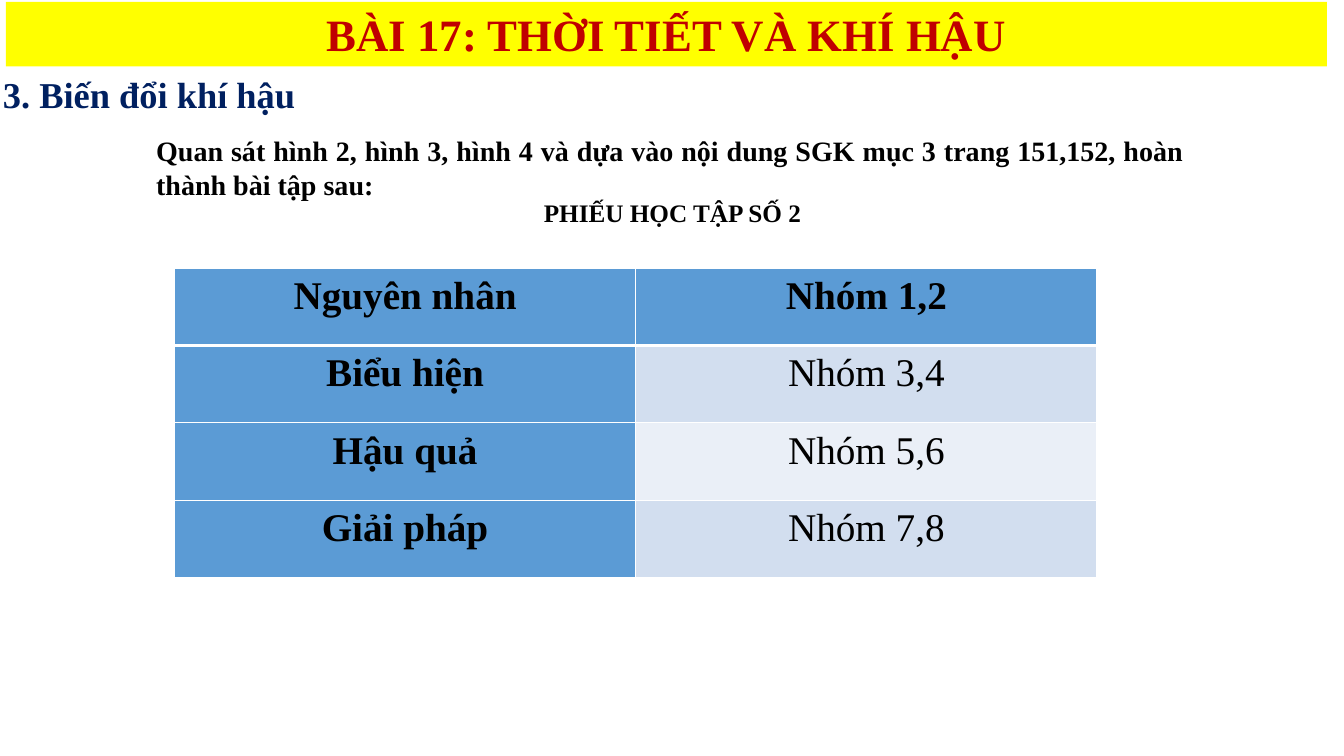
from lxml.etree import SubElement
from pptx import Presentation
from pptx.dml.color import RGBColor
from pptx.enum.shapes import MSO_SHAPE
from pptx.enum.text import MSO_ANCHOR, PP_ALIGN
from pptx.oxml.ns import qn
from pptx.util import Inches, Pt

FONT = "Times New Roman"
BLACK, WHITE, BLUE = "000000", "FFFFFF", "5B9BD5"
BANDS = ["D2DEEF", "EAEFF7"]
GROUPS = [
    ("Nguyên nhân", "Nhóm 1,2"),
    ("Biểu hiện", "Nhóm 3,4"),
    ("Hậu quả", "Nhóm 5,6"),
    ("Giải pháp", "Nhóm 7,8"),
]


def rgb(value):
    return RGBColor.from_string(value)


def write(frame, text, size, color=BLACK, align=PP_ALIGN.LEFT, bold=True):
    """Set a one-paragraph text and return the paragraph."""
    frame.text = text
    paragraph = frame.paragraphs[0]
    paragraph.alignment = align
    font = paragraph.runs[0].font
    font.name, font.size, font.bold = FONT, Pt(size), bold
    font.color.rgb = rgb(color)
    return paragraph


def add_banner(slide, left, top, width, height):
    banner = slide.shapes.add_shape(
        MSO_SHAPE.RECTANGLE, Inches(left), Inches(top), Inches(width), Inches(height))
    banner.shadow.inherit = False
    banner.fill.solid()
    banner.fill.fore_color.rgb = rgb("FFFF00")
    banner.line.fill.background()
    banner.text_frame.word_wrap = True
    banner.text_frame.vertical_anchor = MSO_ANCHOR.TOP
    write(banner.text_frame, "BÀI 17: THỜI TIẾT VÀ KHÍ HẬU", 32, "C00000", PP_ALIGN.CENTER)


def add_text(slide, left, top, width, height, text, size, wrap=True, **style):
    box = slide.shapes.add_textbox(
        Inches(left), Inches(top), Inches(width), Inches(height))
    box.text_frame.word_wrap = wrap
    return write(box.text_frame, text, size, **style)


def add_border(cell, side, points):
    line = SubElement(cell._tc.get_or_add_tcPr(), qn(f"a:ln{side}"), w=str(Pt(points)))
    fill = SubElement(line, qn("a:solidFill"))
    SubElement(fill, qn("a:srgbClr"), val=WHITE)


def add_group_table(slide, left, top, width, height):
    table = slide.shapes.add_table(
        len(GROUPS), 2, Inches(left), Inches(top), Inches(width), Inches(height)).table
    table.first_col = True
    for row, texts in enumerate(GROUPS):
        for column, text in enumerate(texts):
            cell = table.cell(row, column)
            is_header = row == 0 or column == 0
            cell.margin_left = cell.margin_right = Inches(0.07)
            cell.margin_top = cell.margin_bottom = 0
            for side in "LRTB":
                header_edge = (row, side) in [(0, "B"), (1, "T")]
                add_border(cell, side, 3 if header_edge else 1)
            cell.fill.solid()
            cell.fill.fore_color.rgb = rgb(BLUE if is_header else BANDS[(row - 1) % 2])
            paragraph = write(cell.text_frame, text, 28, align=PP_ALIGN.CENTER, bold=is_header)
            paragraph.line_spacing = 1.15


def build_slide(slide):
    heading = add_text(slide, -0.07, 0.72, 3.89, 0.5, "3. Biến đổi khí hậu", 26, color="002060")
    heading.line_spacing = 0.9
    add_banner(slide, 0.06, 0.02, 13.1, 0.64)
    add_text(
        slide, 1.45, 1.28, 10.39, 0.77,
        "Quan sát hình 2, hình 3, hình 4 và dựa vào nội dung SGK mục 3 trang 151,152, "
        "hoàn thành bài tập sau:", 20, align=PP_ALIGN.JUSTIFY)
    add_text(slide, 5.28, 1.91, 2.78, 0.4, "PHIẾU HỌC TẬP SỐ 2", 18,
             wrap=False, align=PP_ALIGN.CENTER)
    add_group_table(slide, 1.73, 2.66, 9.15, 3.07)


def main():
    deck = Presentation()
    deck.slide_width, deck.slide_height = Inches(13.33), Inches(7.5)
    build_slide(deck.slides.add_slide(deck.slide_layouts[6]))
    deck.save("out.pptx")


if __name__ == "__main__":
    main()
